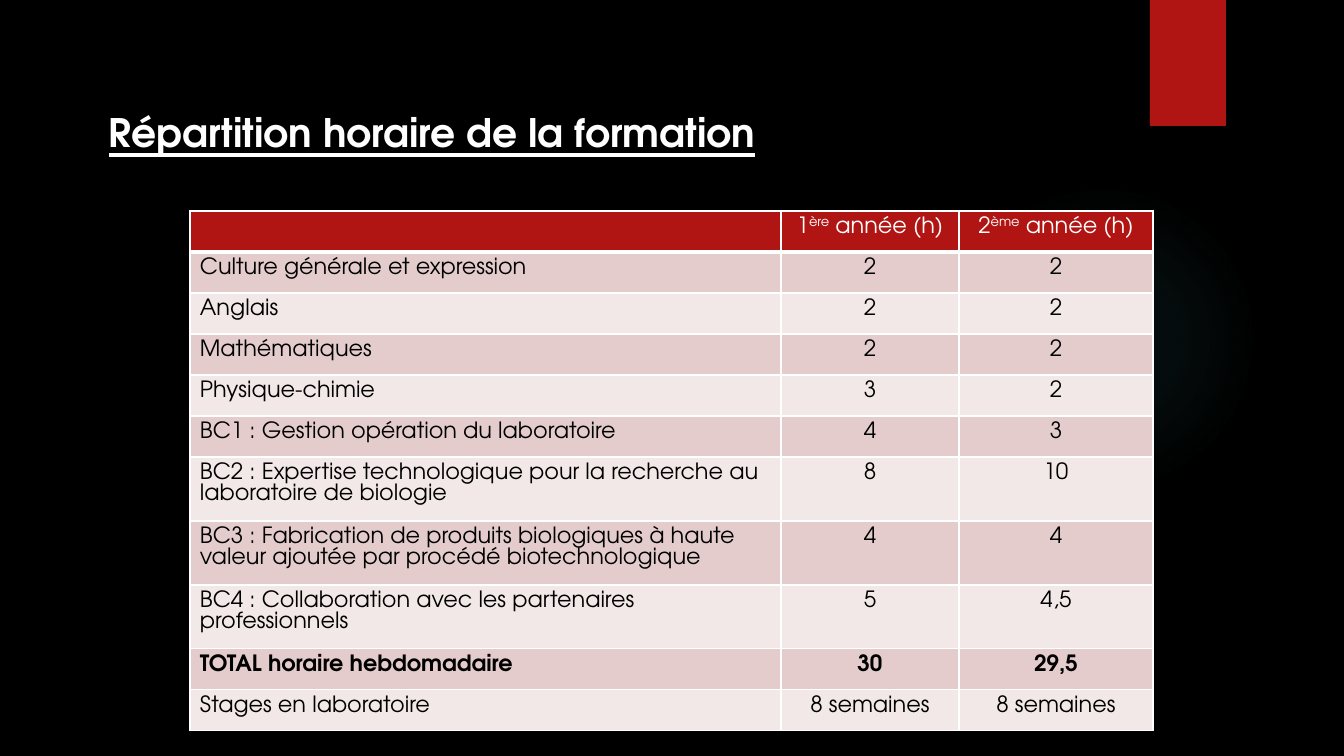
from pptx import Presentation
from pptx.dml.color import RGBColor
from pptx.enum.shapes import MSO_SHAPE
from pptx.enum.text import MSO_ANCHOR, PP_ALIGN
from pptx.oxml import parse_xml
from pptx.oxml.ns import nsdecls
from pptx.util import Emu, Pt

RECT, OVAL = MSO_SHAPE.RECTANGLE, MSO_SHAPE.OVAL
LEFT, CENTER, MIDDLE = PP_ALIGN.LEFT, PP_ALIGN.CENTER, MSO_ANCHOR.MIDDLE
EMU_PER_PX = 914400 / 100.8
FONT = "TeX Gyre Adventor"
COLORS = {
    "black": "000000", "white": "FFFFFF", "red": "B01513",
    "band": "E4CCCC", "light": "F2E8E7", "glow": "50B9C1",
}
COL_WIDTHS = [591, 178, 194]
ROW_HEIGHT, TALL_ROW_HEIGHT = 41, 64
TALL_ROWS = {6, 7, 8}
TOTAL_ROW = 9

# Each cell is a list of runs; odd runs are superscript
HEADER = [[], ["1", "ère", " année (h)"], ["2", "ème", " année (h)"]]
HOURS = [
    ("Culture générale et expression", "2", "2"),
    ("Anglais", "2", "2"),
    ("Mathématiques", "2", "2"),
    ("Physique-chimie", "3", "2"),
    ("BC1 : Gestion opération du laboratoire", "4", "3"),
    ("BC2 : Expertise technologique pour la recherche au laboratoire de biologie", "8", "10"),
    ("BC3 : Fabrication de produits biologiques à haute valeur ajoutée par procédé "
     "biotechnologique", "4", "4"),
    ("BC4 : Collaboration avec les partenaires professionnels", "5", "4,5"),
    ("TOTAL horaire hebdomadaire", "30", "29,5"),
    ("Stages en laboratoire", "8 semaines", "8 semaines"),
]


def px(n):
    return Emu(round(n * EMU_PER_PX))


def color(name):
    return RGBColor.from_string(COLORS[name])


def set_font(font, size, name, bold):
    font.name, font.size, font.bold = FONT, Pt(size), bold
    font.color.rgb = color(name)


def add_block(slide, kind, x, y, w, h, fill):
    sp = slide.shapes.add_shape(kind, px(x), px(y), px(w), px(h))
    sp.shadow.inherit = False
    sp.line.fill.background()
    sp.fill.solid()
    sp.fill.fore_color.rgb = color(fill)
    return sp


def add_glow(slide, x, y, size):
    """Circle that fades out from its centre."""
    sp = add_block(slide, OVAL, x, y, size, size, "glow")
    stops = "".join(
        f'<a:gs pos="{pos * 1000}"><a:srgbClr val="{COLORS["glow"]}">'
        f'<a:alpha val="{alpha * 1000}"/></a:srgbClr></a:gs>'
        for pos, alpha in [(0, 7), (36, 6), (69, 0)])
    gradient = parse_xml(
        f'<a:gradFill {nsdecls("a")}><a:gsLst>{stops}</a:gsLst><a:path path="circle">'
        '<a:fillToRect l="50000" t="50000" r="50000" b="50000"/></a:path></a:gradFill>')
    spPr = sp.element.spPr
    spPr.replace(spPr.find("{*}solidFill"), gradient)


def set_title(slide, text, x, y, w, h):
    title = slide.shapes.title
    title.left, title.top, title.width, title.height = px(x), px(y), px(w), px(h)
    tf = title.text_frame
    tf.text = text
    tf.word_wrap = True
    tf.vertical_anchor = MIDDLE
    p = tf.paragraphs[0]
    p.alignment = CENTER
    set_font(p.font, 28, "white", True)
    p.font.underline = True


def set_borders(cell, bottom):
    tcPr = cell._tc.get_or_add_tcPr()
    for side, width in [("L", 1), ("R", 1), ("T", 1), ("B", bottom)]:
        tcPr.append(parse_xml(
            f'<a:ln{side} {nsdecls("a")} w="{Pt(width)}"><a:solidFill>'
            f'<a:srgbClr val="{COLORS["white"]}"/></a:solidFill></a:ln{side}>'))


def fill_cell(cell, runs, fill, text_color, bold, align, bottom):
    set_borders(cell, bottom)
    cell.fill.solid()
    cell.fill.fore_color.rgb = color(fill)
    cell.margin_left = cell.margin_right = px(10)
    cell.margin_top = cell.margin_bottom = px(6)
    p = cell.text_frame.paragraphs[0]
    p.alignment = align
    p.line_spacing = Pt(15)
    set_font(p.font, 16, text_color, bold)
    for i, text in enumerate(runs):
        r = p.add_run()
        r.text = text
        set_font(r.font, 16, text_color, bold)
        if i % 2:
            r._r.get_or_add_rPr().set("baseline", "30000")


def add_hours_table(slide, x, y):
    rows = [HEADER] + [[[text] for text in row] for row in HOURS]
    heights = [TALL_ROW_HEIGHT if i in TALL_ROWS else ROW_HEIGHT for i in range(len(rows))]
    table = slide.shapes.add_table(len(rows), len(COL_WIDTHS), px(x), px(y),
                                   px(sum(COL_WIDTHS)), px(sum(heights))).table
    for column, width in zip(table.columns, COL_WIDTHS):
        column.width = px(width)
    for i, (row, height) in enumerate(zip(rows, heights)):
        table.rows[i].height = px(height)
        header = i == 0
        fill = "red" if header else "band" if i % 2 else "light"
        for j, runs in enumerate(row):
            fill_cell(table.cell(i, j), runs, fill, "white" if header else "black",
                      i == TOTAL_ROW, CENTER if j else LEFT, 3 if header else 1)


def main():
    prs = Presentation()
    prs.slide_width, prs.slide_height = px(1344), px(756)
    slide = prs.slides.add_slide(prs.slide_layouts[5])

    # Background and decoration
    slide.background.fill.solid()
    slide.background.fill.fore_color.rgb = color("black")
    add_glow(slide, 949, 184, 310)
    add_block(slide, RECT, 1150, 0, 76, 126, "red")

    # Content
    set_title(slide, "Répartition horaire de la formation", 4, 103, 856, 57)
    add_hours_table(slide, 190, 211)
    prs.save("out.pptx")


if __name__ == "__main__":
    main()
